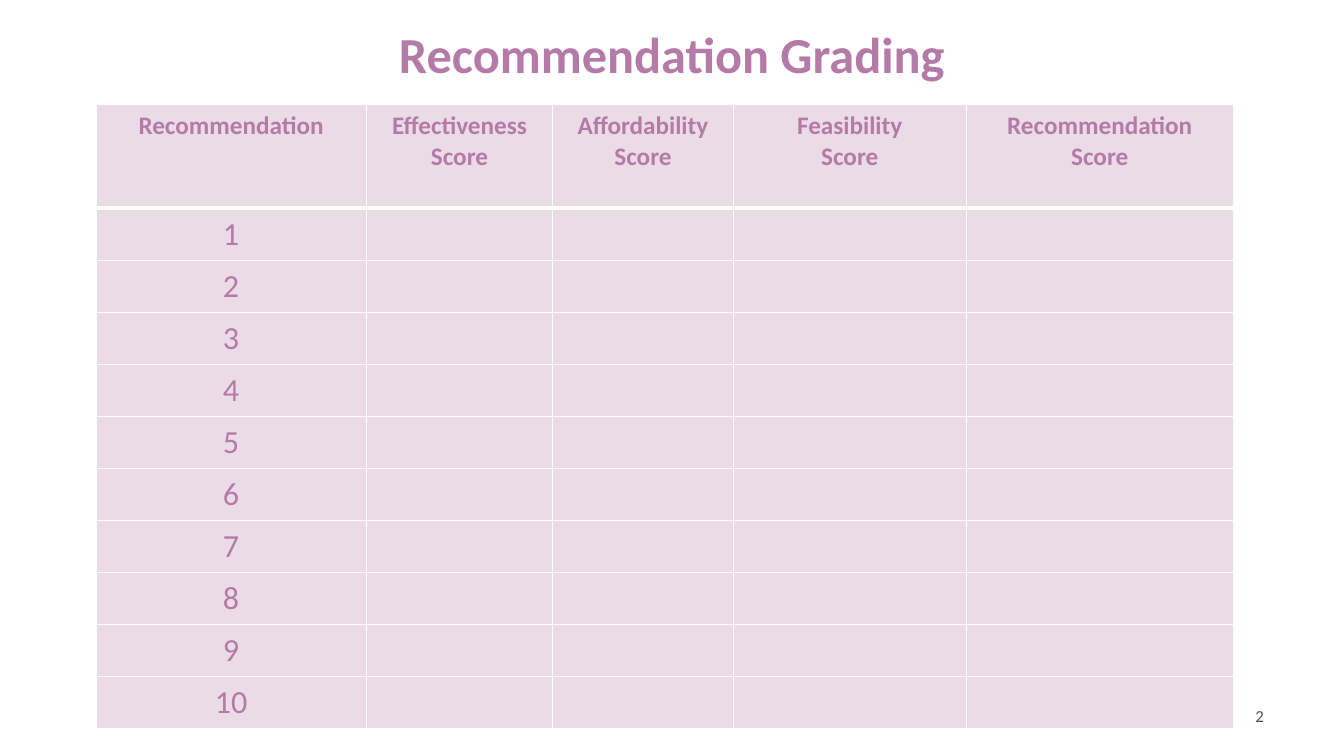
from pptx import Presentation
from pptx.dml.color import RGBColor
from pptx.enum import text
from pptx.oxml import parse_xml
from pptx.oxml.ns import nsdecls, qn
from pptx.util import Cm, Pt

# Content
TITLE = "Recommendation Grading"
PAGE_NUMBER = "2"
HEADERS = [
    "Recommendation",
    "Effectiveness\nScore",
    "Affordability\nScore",
    "Feasibility\nScore",
    "Recommendation Score",
]
RECOMMENDATIONS = [str(number) for number in range(1, 11)]

# Style, lengths in centimetres
FONT = "Calibri"
MAUVE, SLATE, WHITE = "B57BA8", "44546A", "FFFFFF"
FILL_OPACITY = 27
COLUMN_WIDTHS = [6.81, 4.7, 4.55, 5.87, 6.73]
HEADER_HEIGHT, ROW_HEIGHT = 2.63, 1.31
TABLE_LEFT, TABLE_TOP = 2.42, 2.62
CENTER, RIGHT = text.PP_ALIGN.CENTER, text.PP_ALIGN.RIGHT


def color(hex_code):
    return RGBColor.from_string(hex_code)


def write(frame, content, size, hex_code, align, bold=False):
    frame.text = content
    for para in frame.paragraphs:
        para.alignment = align
        para.font.name = FONT
        para.font.size = Pt(size)
        para.font.bold = bold
        para.font.color.rgb = color(hex_code)


def add_text(page, place, content, size, hex_code, align, bold=False):
    box = page.shapes.add_textbox(*map(Cm, place))
    box.text_frame.word_wrap = True
    write(box.text_frame, content, size, hex_code, align, bold)
    return box.text_frame


def style_cell(cell, top_width, bottom_width):
    cell.margin_left = cell.margin_right = Cm(0.33)
    cell.margin_top = cell.margin_bottom = Cm(0.16)
    cell.fill.solid()
    cell.fill.fore_color.rgb = color(MAUVE)
    properties = cell._tc.get_or_add_tcPr()
    tint = properties.find(".//" + qn("a:srgbClr"))
    tint.append(parse_xml(f'<a:alpha {nsdecls("a")} val="{FILL_OPACITY * 1000}"/>'))
    # Borders come before the fill in the cell properties
    widths = {"lnL": 1, "lnR": 1, "lnT": top_width, "lnB": bottom_width}
    for position, (side, width) in enumerate(widths.items()):
        properties.insert(position, parse_xml(
            f'<a:{side} {nsdecls("a")} w="{Pt(width)}"><a:solidFill>'
            f'<a:srgbClr val="{WHITE}"/></a:solidFill></a:{side}>'))


def add_grading_table(page):
    row_count = len(RECOMMENDATIONS) + 1
    heights = [HEADER_HEIGHT] + [ROW_HEIGHT] * len(RECOMMENDATIONS)
    table = page.shapes.add_table(
        row_count, len(HEADERS), Cm(TABLE_LEFT), Cm(TABLE_TOP),
        Cm(sum(COLUMN_WIDTHS)), Cm(sum(heights))).table
    for column, width in zip(table.columns, COLUMN_WIDTHS):
        column.width = Cm(width)
    for row_index, (row, height) in enumerate(zip(table.rows, heights)):
        row.height = Cm(height)
        for cell in row.cells:
            style_cell(cell, 3 if row_index == 1 else 1, 3 if row_index == 0 else 1)
    for cell, header in zip(table.rows[0].cells, HEADERS):
        write(cell.text_frame, header, 18, MAUVE, CENTER, bold=True)
    for row_index, number in enumerate(RECOMMENDATIONS, 1):
        write(table.cell(row_index, 0).text_frame, number, 23, MAUVE, CENTER)


def main():
    deck = Presentation()
    deck.slide_width, deck.slide_height = Cm(33.87), Cm(19.05)
    page = deck.slides.add_slide(deck.slide_layouts[6])

    # Title
    title = add_text(page, (0, 0.28, 33.87, 2.03), TITLE, 36, MAUVE, CENTER, bold=True)
    title.vertical_anchor = text.MSO_ANCHOR.MIDDLE
    title.paragraphs[0].line_spacing = Pt(46)

    # Page number and table
    add_text(page, (29.46, 17.65, 2.64, 1.02), PAGE_NUMBER, 12, SLATE, RIGHT)
    add_grading_table(page)

    deck.save("out.pptx")


if __name__ == "__main__":
    main()
